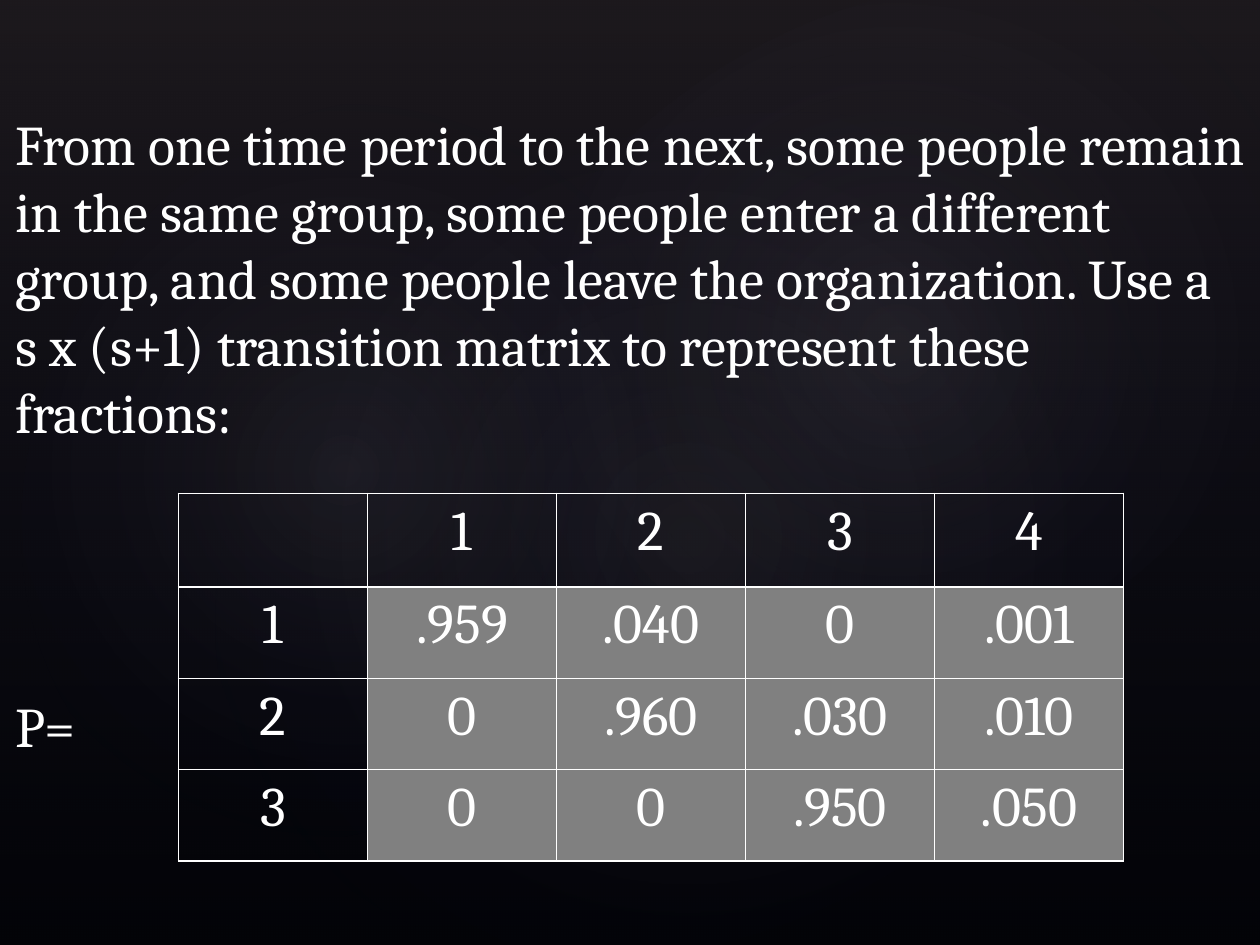
import pptx
import pptx.dml.color
import pptx.enum.shapes
import pptx.enum.text
import pptx.oxml
import pptx.oxml.ns
import pptx.util

Pt = pptx.util.Pt
WIDTH, HEIGHT = 720, 540


def rgb(value):
    return pptx.dml.color.RGBColor.from_string(value)


class Deck:
    """Holds the style and the current slide."""

    font, size = "Cambria", 32
    ink, cell_fill, back = "FFFFFF", "808080", "000000"

    def __init__(self, prs):
        self.slide = prs.slides.add_slide(prs.slide_layouts[6])
        fill = self.slide.background.fill
        fill.solid()
        fill.fore_color.rgb = rgb(self.back)

    def style(self, p):
        p.font.name = self.font
        p.font.size = Pt(self.size)
        p.font.color.rgb = rgb(self.ink)

    def gradient(self, kind, box, stops, direction, rotation=0):
        """Add a shape with stops of (position %, colour, opacity %)."""
        sp = self.slide.shapes.add_shape(kind, *map(Pt, box))
        sp.shadow.inherit = False
        sp.rotation = rotation
        sp.line.fill.background()
        sp.fill.background()
        gs = "".join(
            f'<a:gs pos="{pos * 1000}"><a:srgbClr val="{color}">'
            f'<a:alpha val="{alpha * 1000}"/></a:srgbClr></a:gs>'
            for pos, color, alpha in stops)
        grad = pptx.oxml.parse_xml(
            f'<a:gradFill {pptx.oxml.ns.nsdecls("a")} rotWithShape="1">'
            f'<a:gsLst>{gs}</a:gsLst>{direction}</a:gradFill>')
        spPr = sp.fill._xPr
        spPr.replace(spPr.find(pptx.oxml.ns.qn("a:noFill")), grad)

    def glow(self, box, rotation, alpha):
        self.gradient(
            pptx.enum.shapes.MSO_SHAPE.OVAL, box,
            [(0, "C4BCC6", alpha), (58, "242852", 0)],
            '<a:path path="circle"><a:fillToRect l="50000" t="50000" '
            'r="50000" b="50000"/></a:path>', rotation)

    def text(self, text, left, top, width, height):
        tf = self.slide.shapes.add_textbox(
            *map(Pt, (left, top, width, height))).text_frame
        tf.word_wrap = True
        tf.margin_left, tf.margin_right = Pt(8.64), Pt(7.2)
        tf.margin_top = tf.margin_bottom = 0
        p = tf.paragraphs[0]
        p.text = text
        self.style(p)

    def border(self, cell):
        tcPr = cell._tc.get_or_add_tcPr()
        for i, side in enumerate(("lnL", "lnR", "lnT", "lnB")):
            tcPr.insert(i, pptx.oxml.parse_xml(
                f'<a:{side} {pptx.oxml.ns.nsdecls("a")} w="12700"><a:solidFill>'
                f'<a:srgbClr val="{self.ink}"/></a:solidFill></a:{side}>'))

    def matrix(self, rows, left, top, col_width, row_heights):
        """Add a table with a clear header row and column."""
        table = self.slide.shapes.add_table(
            len(rows), len(rows[0]), Pt(left), Pt(top),
            Pt(col_width * len(rows[0])), Pt(sum(row_heights))).table
        for col in table.columns:
            col.width = Pt(col_width)
        for r, (values, height) in enumerate(zip(rows, row_heights)):
            table.rows[r].height = Pt(height)
            for c, value in enumerate(values):
                cell = table.cell(r, c)
                if r and c:
                    cell.fill.solid()
                    cell.fill.fore_color.rgb = rgb(self.cell_fill)
                else:
                    cell.fill.background()
                self.border(cell)
                p = cell.text_frame.paragraphs[0]
                p.text = value
                p.alignment = pptx.enum.text.PP_ALIGN.CENTER
                self.style(p)


def main():
    prs = pptx.Presentation()
    prs.slide_width, prs.slide_height = Pt(WIDTH), Pt(HEIGHT)
    deck = Deck(prs)

    # Backdrop: vertical fade and three soft glows
    deck.gradient(pptx.enum.shapes.MSO_SHAPE.RECTANGLE, (0, 0, WIDTH, HEIGHT),
                  [(0, "504652", 36), (100, "242852", 10)],
                  '<a:lin ang="5400000" scaled="0"/>')
    deck.glow((108, 82, 570, 449), 328.7, 7)
    deck.glow((-21.6, 92, 436, 353), 294.3, 8)
    deck.glow((257.8, 9.4, 510.5, 374.4), 328.7, 8)

    # Explanation and matrix label
    deck.text("From one time period to the next, some people remain in the "
              "same group, some people enter a different group, and some "
              "people leave the organization. Use a s x (s+1) transition "
              "matrix to represent these fractions:", 0, 62.3, WIDTH, 195)
    deck.text("P=", 0, 395, 100, 40)

    # Transition matrix
    deck.matrix([["", "1", "2", "3", "4"],
                 ["1", ".959", ".040", "0", ".001"],
                 ["2", "0", ".960", ".030", ".010"],
                 ["3", "0", "0", ".950", ".050"]],
                102, 282, 108, [53.5, 52.2, 52.2, 52.2])

    prs.save("out.pptx")


if __name__ == "__main__":
    main()
